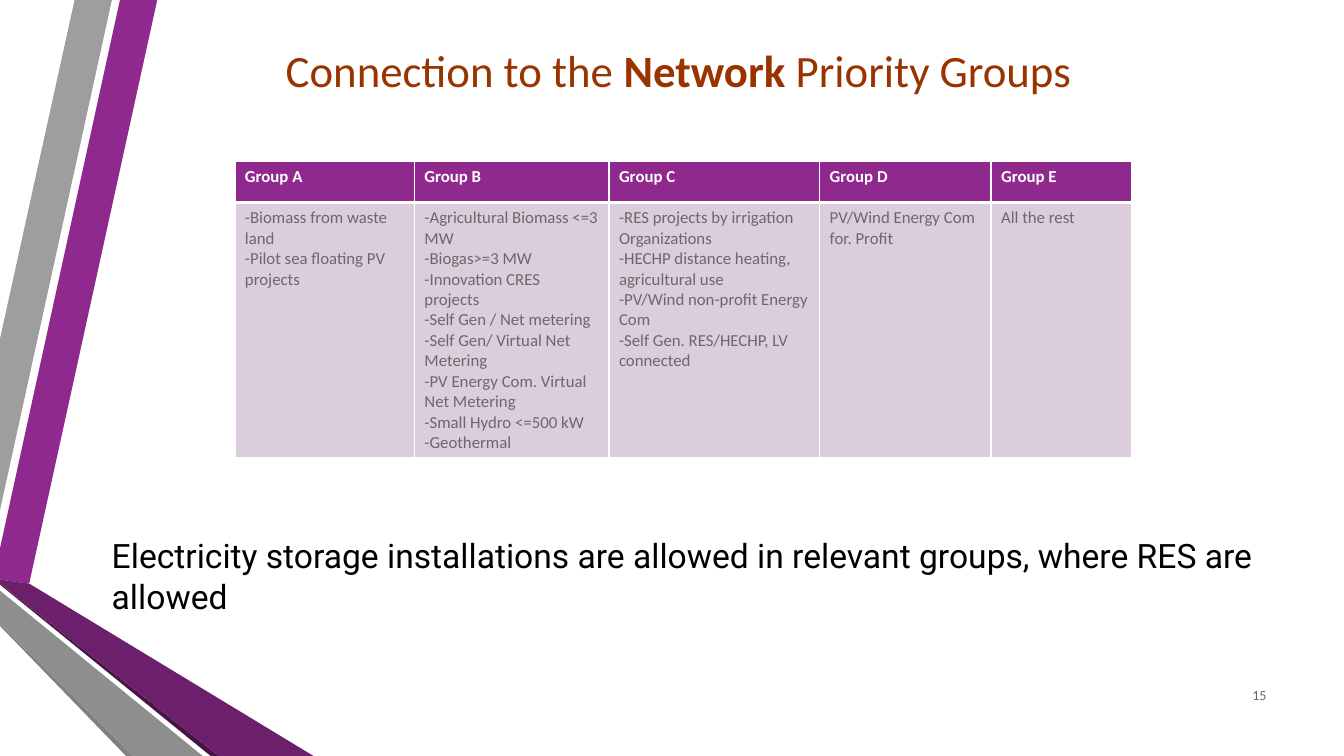
from lxml.etree import SubElement
from pptx import Presentation
from pptx.dml.color import RGBColor
from pptx.enum.text import MSO_ANCHOR as Anchor, PP_ALIGN as Align
from pptx.oxml.ns import qn
from pptx.util import Inches, Pt

PURPLE = RGBColor(0x90, 0x29, 0x8D)
DEEP_PURPLE = RGBColor(0x6C, 0x1F, 0x6A)
DARK_PURPLE = RGBColor(0x48, 0x14, 0x46)
LILAC = RGBColor(0xDB, 0xCD, 0xDB)
LIGHT_GREY = RGBColor(0x9E, 0x9E, 0x9E)
MID_GREY = RGBColor(0x8E, 0x8E, 0x8E)
DARK_GREY = RGBColor(0x80, 0x80, 0x80)
TEXT_GREY = RGBColor(0x69, 0x69, 0x69)
RUST = RGBColor(0x99, 0x33, 0x00)
BLACK = RGBColor(0, 0, 0)
WHITE = RGBColor(0xFF, 0xFF, 0xFF)

RIBBONS = [
    (PURPLE, [(0, 5.44), (0, 5.75), (0.29, 5.79), (1.56, 0), (1.19, 0)]),
    (LIGHT_GREY, [(1.11, 0), (0.74, 0), (0, 3.36), (0, 5.06)]),
    (DARK_GREY, [(0, 6.19), (0, 6.21), (1.25, 7.5), (1.32, 7.5)]),
    (DARK_PURPLE, [(0, 5.79), (0, 5.8), (2.09, 7.5), (2.17, 7.5)]),
    (DEEP_PURPLE, [(0, 5.79), (2.17, 7.5), (3.11, 7.5), (0.29, 5.79), (0, 5.75)]),
    (MID_GREY, [(0, 6.19), (1.32, 7.5), (2.01, 7.5), (0, 5.86)]),
]

GROUPS = [
    ("Group A", 1.78, ["-Biomass from waste land", "-Pilot sea floating PV projects"]),
    ("Group B", 1.93, [
        "-Agricultural Biomass <=3 MW",
        "-Biogas>=3 MW",
        "-Innovation CRES projects",
        "-Self Gen / Net metering",
        "-Self Gen/ Virtual Net Metering",
        "-PV Energy Com. Virtual Net Metering",
        "-Small Hydro <=500 kW",
        "-Geothermal",
    ]),
    ("Group C", 2.09, [
        "-RES projects by irrigation Organizations",
        "-HECHP distance heating, agricultural use",
        "-PV/Wind non-profit Energy Com",
        "-Self Gen. RES/HECHP, LV connected",
    ]),
    ("Group D", 1.7, ["PV/Wind Energy Com for. Profit"]),
    ("Group E", 1.39, ["All the rest"]),
]


def style(font, name, size, color, bold=False):
    font.name = name
    font.size = Pt(size)
    font.color.rgb = color
    font.bold = bold


def add_ribbon(page, color, points):
    corners = [(Inches(x), Inches(y)) for x, y in points]
    builder = page.shapes.build_freeform(*corners[0])
    builder.add_line_segments(corners[1:])
    ribbon = builder.convert_to_shape()
    ribbon.shadow.inherit = False
    ribbon.fill.solid()
    ribbon.fill.fore_color.rgb = color
    ribbon.line.fill.background()


def add_text(page, place, text, name, size, color, align=Align.LEFT, anchor=Anchor.TOP):
    box = page.shapes.add_textbox(*map(Inches, place))
    box.text_frame.word_wrap = True
    box.text_frame.vertical_anchor = anchor
    para = box.text_frame.paragraphs[0]
    para.alignment = align
    style(para.font, name, size, color)
    for part in text:
        para.add_run().text = part
    return para


def add_borders(cell, bottom):
    properties = cell._tc.get_or_add_tcPr()
    for side, width in (("L", 1), ("R", 1), ("T", 1), ("B", bottom)):
        line = SubElement(properties, qn(f"a:ln{side}"), w=str(Pt(width)))
        fill = SubElement(line, qn("a:solidFill"))
        SubElement(fill, qn("a:srgbClr"), val=str(WHITE))


def fill_cell(cell, lines, background, color, bold, bottom):
    add_borders(cell, bottom)
    cell.fill.solid()
    cell.fill.fore_color.rgb = background
    cell.text = "\n".join(lines)
    for para in cell.text_frame.paragraphs:
        style(para.font, "Calibri", 12, color, bold)


def add_group_table(page):
    frame = page.shapes.add_table(
        2, len(GROUPS), Inches(2.33), Inches(1.6), Inches(8.89), Inches(2.94))
    table = frame.table
    table.horz_banding = False
    table.rows[0].height = Inches(0.41)
    table.rows[1].height = Inches(2.53)
    for index, (heading, width, members) in enumerate(GROUPS):
        table.columns[index].width = Inches(width)
        fill_cell(table.cell(0, index), [heading], PURPLE, WHITE, True, 3)
        fill_cell(table.cell(1, index), members, LILAC, TEXT_GREY, False, 1)


def main():
    deck = Presentation()
    deck.slide_width = Inches(13.33)
    deck.slide_height = Inches(7.5)
    page = deck.slides.add_slide(deck.slide_layouts[6])
    for color, points in RIBBONS:
        add_ribbon(page, color, points)
    title = add_text(page, (0.75, 0.35, 11.96, 0.69),
                     ["Connection to the ", "Network", " Priority Groups"],
                     "Calibri", 32, RUST, Align.CENTER, Anchor.MIDDLE)
    title.runs[1].font.bold = True
    add_text(page, (12.06, 6.69, 0.6, 0.4), ["15"],
             "Calibri", 10, TEXT_GREY, Align.RIGHT, Anchor.MIDDLE)
    add_group_table(page)
    add_text(page, (1.01, 5.26, 12.32, 0.9),
             ["Electricity storage installations are allowed in relevant groups, "
              "where RES are allowed"], "Roboto", 24, BLACK)
    deck.save("out.pptx")


if __name__ == "__main__":
    main()
